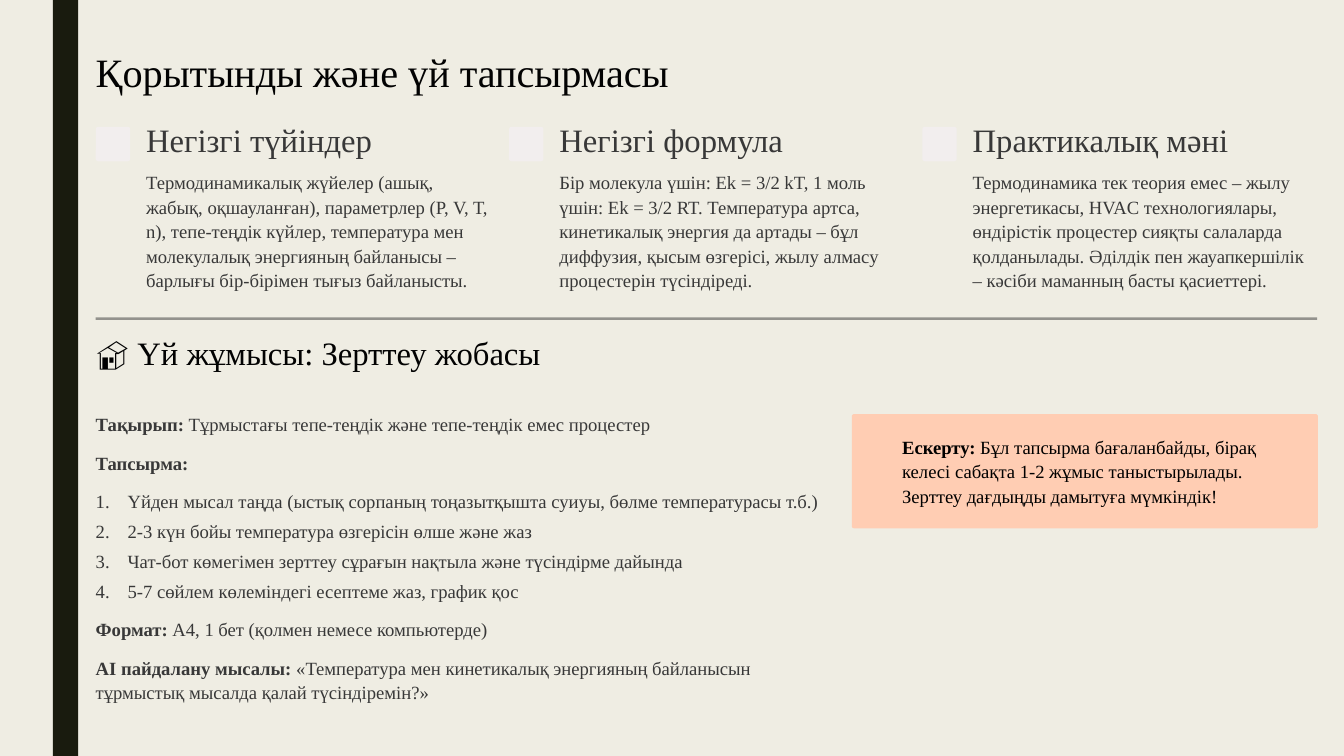
from lxml import etree
from pptx import Presentation
from pptx.dml.color import RGBColor
from pptx.enum.shapes import MSO_SHAPE
from pptx.oxml.ns import qn
from pptx.util import Inches, Pt

RECT = MSO_SHAPE.RECTANGLE
ROUND = MSO_SHAPE.ROUNDED_RECTANGLE
FONT = "Times New Roman"
CREAM = RGBColor(0xEF, 0xED, 0xE3)
OLIVE = RGBColor(0x19, 0x1B, 0x0E)
INK = RGBColor(0x02, 0x02, 0x02)
BLACK = RGBColor(0x00, 0x00, 0x00)
GRAY = RGBColor(0x38, 0x38, 0x38)
PALE = RGBColor(0xF2, 0xEE, 0xEE)
PEACH = RGBColor(0xFF, 0xCD, 0xB3)

LEFT = 1.14
STEP = 4.92
TOPICS = [
    ("Негізгі түйіндер",
     "Термодинамикалық жүйелер (ашық, жабық, оқшауланған), параметрлер (P, V, T, n), "
     "тепе-теңдік күйлер, температура мен молекулалық энергияның байланысы – "
     "барлығы бір-бірімен тығыз байланысты."),
    ("Негізгі формула",
     "Бір молекула үшін: Ek = 3/2 kT, 1 моль үшін: Ek = 3/2 RT. Температура артса, "
     "кинетикалық энергия да артады – бұл диффузия, қысым өзгерісі, жылу алмасу "
     "процестерін түсіндіреді."),
    ("Практикалық мәні",
     "Термодинамика тек теория емес – жылу энергетикасы, HVAC технологиялары, "
     "өндірістік процестер сияқты салаларда қолданылады. Әділдік пен жауапкершілік – "
     "кәсіби маманның басты қасиеттері."),
]
INTRO = [
    ("Тақырып:", " Тұрмыстағы тепе-теңдік және тепе-теңдік емес процестер"),
    ("Тапсырма:", ""),
]
TASKS = [
    "Үйден мысал таңда (ыстық сорпаның тоңазытқышта суиуы, бөлме температурасы т.б.)",
    "2-3 күн бойы температура өзгерісін өлше және жаз",
    "Чат-бот көмегімен зерттеу сұрағын нақтыла және түсіндірме дайында",
    "5-7 сөйлем көлеміндегі есептеме жаз, график қос",
]
OUTRO = [
    ("Формат:", " А4, 1 бет (қолмен немесе компьютерде)"),
    ("AI пайдалану мысалы:", " «Температура мен кинетикалық энергияның байланысын "
     "тұрмыстық мысалда қалай түсіндіремін?»"),
]
NOTE = ("Ескерту:", " Бұл тапсырма бағаланбайды, бірақ келесі сабақта 1-2 жұмыс "
        "таныстырылады. Зерттеу дағдыңды дамытуға мүмкіндік!")


def add_block(slide, kind, box, color, curve=None):
    """Add a plain filled shape."""
    block = slide.shapes.add_shape(kind, *map(Inches, box))
    block.shadow.inherit = False
    block.fill.solid()
    block.fill.fore_color.rgb = color
    block.line.fill.background()
    if curve is not None:
        block.adjustments[0] = curve
    return block


def add_frame(slide, box):
    """Add a wrapping text box without margins and return its frame."""
    frame = slide.shapes.add_textbox(*map(Inches, box)).text_frame
    frame.margin_left = frame.margin_right = 0
    frame.margin_top = frame.margin_bottom = 0
    frame.word_wrap = True
    return frame


def add_run(para, text, size, color, bold=False):
    """Add one styled run."""
    run = para.add_run()
    run.text = text
    run.font.name = FONT
    run.font.size = Pt(size)
    run.font.color.rgb = color
    run.font.bold = bold


def add_title(slide, box, text, size, color, lead):
    """Add a one-line heading and return its paragraph."""
    para = add_frame(slide, box).paragraphs[0]
    para.line_spacing = Pt(lead)
    add_run(para, text, size, color)
    return para


def add_para(frame, text, color=GRAY, label="", gap=12):
    """Add a body paragraph with an optional bold label."""
    para = frame.paragraphs[0]
    if para.runs:
        para = frame.add_paragraph()
        para.space_before = Pt(gap)
    para.line_spacing = Pt(21)
    if label:
        add_run(para, label, 16, color, True)
    if text:
        add_run(para, text, 16, color)
    return para


def add_number(para):
    """Turn a paragraph into a numbered item."""
    props = para._p.get_or_add_pPr()
    props.set("marL", str(Inches(0.38)))
    props.set("indent", str(Inches(-0.38)))
    etree.SubElement(props, qn("a:buFont"), typeface="+mj-lt")
    etree.SubElement(props, qn("a:buAutoNum"), type="arabicPeriod")


def add_topic(slide, left, head, body):
    """Add one column with a marker, heading and text."""
    add_block(slide, ROUND, (left, 1.51, 0.41, 0.41), PALE, 0.07)
    add_title(slide, (left + 0.6, 1.54, 4.1, 0.36), head, 28, GRAY, 25.5)
    add_para(add_frame(slide, (left + 0.6, 2.01, 4.1, 1.46)), body)


def add_rule(slide):
    """Add the half-transparent dividing bar."""
    rule = add_block(slide, RECT, (LEFT, 3.78, 14.54, 0.03), GRAY)
    tint = rule._element.spPr.find(qn("a:solidFill"))[0]
    etree.SubElement(tint, qn("a:alpha"), val="50000")


def add_work(slide):
    """Add the homework description."""
    frame = add_frame(slide, (LEFT, 4.89, 8.7, 3.49))
    for label, text in INTRO:
        add_para(frame, text, label=label)
    for index, task in enumerate(TASKS):
        add_number(add_para(frame, task, gap=4.6 if index else 12))
    for label, text in OUTRO:
        add_para(frame, text, label=label)


def add_note(slide):
    """Add the highlighted note."""
    add_block(slide, ROUND, (10.14, 4.93, 5.55, 1.36), PEACH, 0.02)
    label, text = NOTE
    add_para(add_frame(slide, (10.74, 5.16, 4.77, 0.88)), text, BLACK, label)


def main():
    """Build and save the slide."""
    deck = Presentation()
    deck.slide_width, deck.slide_height = Inches(16), Inches(9)
    slide = deck.slides.add_slide(deck.slide_layouts[6])
    slide.background.fill.solid()
    slide.background.fill.fore_color.rgb = CREAM
    add_block(slide, RECT, (0.63, 0, 0.3, 9), OLIVE)
    add_title(slide, (LEFT, 0.54, 7.53, 0.6), "Қорытынды және үй тапсырмасы", 34.5, INK, 43)
    for index, (head, body) in enumerate(TOPICS):
        add_topic(slide, LEFT + index * STEP, head, body)
    add_rule(slide)
    house = add_title(slide, (LEFT, 4.08, 6, 0.37), "🏠", 28, BLACK, 25.5)
    add_run(house, " Үй жұмысы: Зерттеу жобасы", 28, INK)
    add_work(slide)
    add_note(slide)
    deck.save("out.pptx")


if __name__ == "__main__":
    main()
